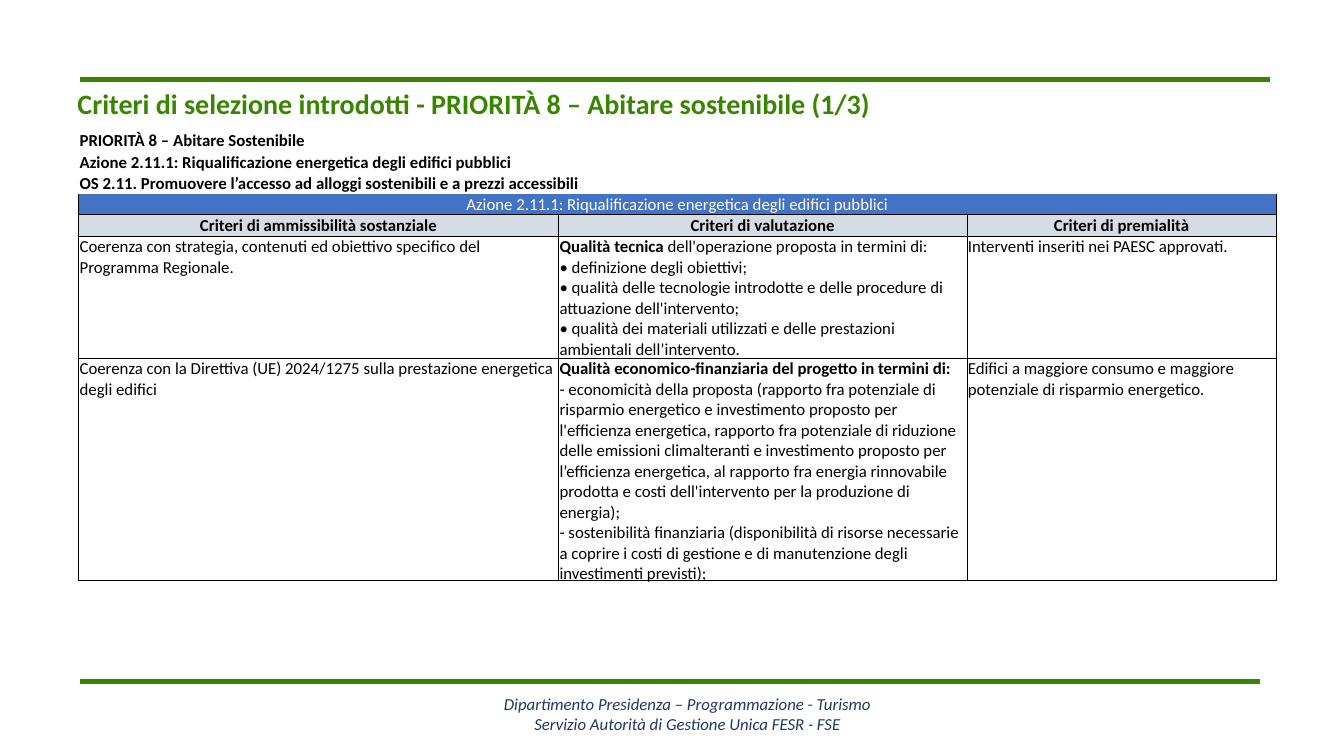
from pptx import Presentation
from pptx import util as u
from pptx.dml.color import RGBColor
from pptx.enum import shapes, text
from pptx.oxml.ns import qn
from lxml import etree

GREEN, NAVY, BLACK, WHITE = "388600", "203864", "000000", "FFFFFF"
BLUE, GREY = "4472C4", "D6DCE4"
LEFT, CENTER = text.PP_ALIGN.LEFT, text.PP_ALIGN.CENTER
TOP, BOTTOM = text.MSO_ANCHOR.TOP, text.MSO_ANCHOR.BOTTOM


def colour(code):
    """Turn a hex string into a colour."""
    return RGBColor.from_string(code)


class Page:
    """Draws on one slide, with lengths in percent of its width and height."""

    font = "Calibri"
    cell_inset = u.Inches(0.01)

    def __init__(self, deck):
        """Add a blank slide to the deck."""
        self.deck = deck
        self.slide = deck.slides.add_slide(deck.slide_layouts[6])

    def x(self, share):
        """Convert a share of the width."""
        return round(self.deck.slide_width * share / 100)

    def y(self, share):
        """Convert a share of the height."""
        return round(self.deck.slide_height * share / 100)

    def rule(self, start, end, level):
        """Draw a horizontal green rule."""
        rule = self.slide.shapes.add_connector(
            shapes.MSO_CONNECTOR.STRAIGHT,
            self.x(start), self.y(level), self.x(end), self.y(level))
        rule.line.color.rgb = colour(GREEN)
        rule.line.width = u.Pt(3.25)
        etree.SubElement(rule._element.spPr, qn("a:effectLst"))

    def typeset(self, frame, lines, ink, align=LEFT, **style):
        """Fill a frame with lines, each made of (wording, bold) runs."""
        frame.word_wrap = True
        for number, line in enumerate(lines):
            paragraph = frame.add_paragraph() if number else frame.paragraphs[0]
            paragraph.alignment = align
            for wording, bold in line:
                run = paragraph.add_run()
                run.text = wording
                run.font.color.rgb = colour(ink)
                look = {"name": self.font, "size": u.Pt(12), "bold": bold, **style}
                for key, value in look.items():
                    setattr(run.font, key, value)

    def box(self, area, lines, ink, margins, align=LEFT, **style):
        """Add a text box."""
        left, top, width, height = area
        frame = self.slide.shapes.add_textbox(
            self.x(left), self.y(top), self.x(width), self.y(height)).text_frame
        for key, value in margins.items():
            setattr(frame, key, value)
        self.typeset(frame, lines, ink, align, **style)

    def border(self, cell, sides):
        """Draw thin black borders on the given sides and none on the others."""
        properties = cell._tc.get_or_add_tcPr()
        for side in "LRTB":
            edge = etree.SubElement(properties, qn(f"a:ln{side}"), w=str(u.Pt(0.5)))
            if side in sides:
                fill = etree.SubElement(edge, qn("a:solidFill"))
                etree.SubElement(fill, qn("a:srgbClr"), val=BLACK)
            else:
                etree.SubElement(edge, qn("a:noFill"))

    def table(self, left, top, widths, rows):
        """Add a table whose one-cell rows span all columns."""
        grid = self.slide.shapes.add_table(
            len(rows), len(widths), self.x(left), self.y(top), self.x(sum(widths)),
            self.y(sum(row["height"] for row in rows))).table
        grid.first_row = grid.horz_banding = False
        for column, width in zip(grid.columns, widths):
            column.width = self.x(width)
        for number, row in enumerate(rows):
            grid.rows[number].height = self.y(row["height"])
            for column in range(len(widths)):
                cell = grid.cell(number, column)
                self.border(cell, row["sides"])
                if row["fill"]:
                    cell.fill.solid()
                    cell.fill.fore_color.rgb = colour(row["fill"])
                else:
                    cell.fill.background()
                look = {"margin_left": self.cell_inset, "margin_right": self.cell_inset,
                        "margin_top": self.cell_inset, "margin_bottom": 0,
                        "vertical_anchor": row["anchor"]}
                for key, value in look.items():
                    setattr(cell, key, value)
            if len(row["cells"]) == 1:
                grid.cell(number, 0).merge(grid.cell(number, len(widths) - 1))
            for column, lines in enumerate(row["cells"]):
                self.typeset(grid.cell(number, column).text_frame, lines,
                             row["ink"], row["align"])


def plain(*lines, bold=False):
    """Make single-run lines."""
    return [[(line, bold)] for line in lines]


def table_row(cells, height=2.8, sides="", fill=None, ink=BLACK, align=LEFT, anchor=BOTTOM):
    """Describe one table row."""
    return dict(cells=cells, height=height, sides=sides, fill=fill, ink=ink,
                align=align, anchor=anchor)


def main():
    """Build and save the slide."""
    deck = Presentation()
    deck.slide_width, deck.slide_height = u.Inches(13.33), u.Inches(7.5)
    page = Page(deck)

    page.rule(5.93, 94.52, 10.53)
    page.rule(5.93, 93.77, 90.13)
    page.box((3.9, 91.73, 94.52, 7.6),
             plain("Dipartimento Presidenza – Programmazione - Turismo",
                   "Servizio Autorità di Gestione Unica FESR - FSE"),
             NAVY, {"margin_top": 0, "margin_bottom": 0}, CENTER, italic=True)
    page.box((5.03, 10.8, 89.12, 10.27),
             plain("Criteri di selezione introdotti - PRIORITÀ 8 – Abitare sostenibile (1/3)",
                   bold=True),
             GREEN, {}, size=u.Pt(20))

    action = "Azione 2.11.1: Riqualificazione energetica degli edifici pubblici"
    headings = ["PRIORITÀ 8 – Abitare Sostenibile", action,
                "OS 2.11. Promuovere l’accesso ad alloggi sostenibili e a prezzi accessibili"]
    criteria = ["Criteri di ammissibilità sostanziale", "Criteri di valutazione",
                "Criteri di premialità"]
    technical = [
        [("Qualità tecnica", True), (" dell'operazione proposta in termini di:", False)],
        *plain("• definizione degli obiettivi;",
               "• qualità delle tecnologie introdotte e delle procedure di "
               "attuazione dell'intervento;",
               "• qualità dei materiali utilizzati e delle prestazioni "
               "ambientali dell’intervento.")]
    financial = [
        *plain("Qualità economico-finanziaria del progetto in termini di:", bold=True),
        *plain("- economicità della proposta (rapporto fra potenziale di risparmio "
               "energetico e investimento proposto per l'efficienza energetica, rapporto "
               "fra potenziale di riduzione delle emissioni climalteranti e investimento "
               "proposto per l’efficienza energetica, al rapporto fra energia rinnovabile "
               "prodotta e costi dell'intervento per la produzione di energia);",
               "- sostenibilità finanziaria (disponibilità di risorse necessarie a coprire "
               "i costi di gestione e di manutenzione degli investimenti previsti);")]

    page.table(5.85, 17.2, [35.71, 30.38, 23.03], [
        *[table_row([plain(heading, bold=True)]) for heading in headings],
        table_row([plain(action)], sides="LRB", fill=BLUE, ink=WHITE, align=CENTER),
        table_row([plain(name, bold=True) for name in criteria],
                  sides="LRTB", fill=GREY, align=CENTER),
        table_row([plain("Coerenza con strategia, contenuti ed obiettivo specifico del "
                         "Programma Regionale."),
                   technical,
                   plain("Interventi inseriti nei PAESC approvati.")],
                  height=16.13, sides="LRTB", anchor=TOP),
        table_row([plain("Coerenza con la Direttiva (UE) 2024/1275 sulla prestazione "
                         "energetica degli edifici"),
                   financial,
                   plain("Edifici a maggiore consumo e maggiore potenziale di "
                         "risparmio energetico.")],
                  height=29.47, sides="LRTB", anchor=TOP)])
    deck.save("out.pptx")


if __name__ == "__main__":
    main()
